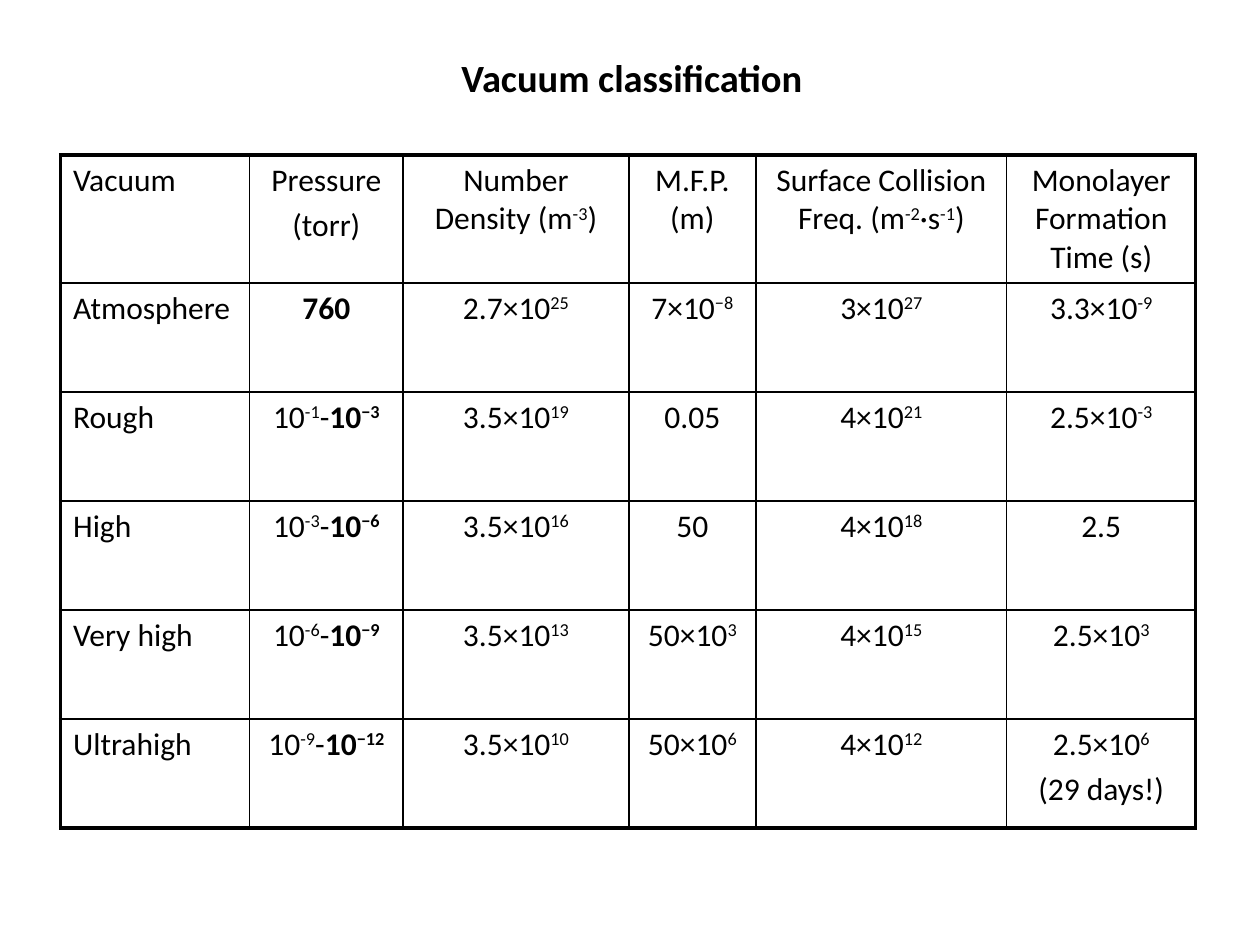
import pptx
import pptx.util
import pptx.dml.color
import pptx.enum.text
import pptx.oxml
import pptx.oxml.ns

Pt = pptx.util.Pt
ALIGN = pptx.enum.text.PP_ALIGN
ANCHOR = pptx.enum.text.MSO_ANCHOR
COLORS = {"text": "000000", "border": "000000"}
FONT = "Calibri"
COL_WIDTHS = [108, 87.8, 128.9, 72.7, 143.3, 108]
HEADER_HEIGHT, ROW_HEIGHT = 72, 62.3
OUTER, INNER = 2.25, 1

# Cell markup: *bold*, |superscript|, line feed for a new paragraph
VACUUM_LEVELS = [
    ["Vacuum", "Pressure\n(torr)", "Number Density (m|-3|)", "M.F.P. (m)",
     "Surface Collision Freq. (m|-2|·s|-1|)", "Monolayer Formation Time (s)"],
    ["Atmosphere", "*760*", "2.7×10|25|", "7×10|−8|", "3×10|27|", "3.3×10|-9|"],
    ["Rough", "10|-1|-*10|−3|*", "3.5×10|19|", "0.05", "4×10|21|", "2.5×10|-3|"],
    ["High", "10|-3|-*10|−6|*", "3.5×10|16|", "50", "4×10|18|", "2.5"],
    ["Very high", "10|-6|-*10|−9|*", "3.5×10|13|", "50×10|3|", "4×10|15|", "2.5×10|3|"],
    ["Ultrahigh", "10|-9|-*10|−12|*", "3.5×10|10|", "50×10|6|", "4×10|12|",
     "2.5×10|6|\n(29 days!)"],
]


def format_run(r, size, bold=False):
    r.font.name = FONT
    r.font.size = Pt(size)
    r.font.bold = bold
    r.font.color.rgb = pptx.dml.color.RGBColor.from_string(COLORS["text"])


def add_runs(p, markup, size):
    """Odd pieces between stars are bold, odd pieces between bars are raised."""
    for i, part in enumerate(markup.split("*")):
        for j, text in enumerate(part.split("|")):
            if text:
                r = p.add_run()
                r.text = text
                format_run(r, size, bold=i % 2 == 1)
                if j % 2:
                    r.font._element.set("baseline", "30000")


def set_borders(cell, widths):
    tc_pr = cell._tc.get_or_add_tcPr()
    for i, (side, width) in enumerate(zip("LRTB", widths)):
        ln = pptx.oxml.parse_xml(
            f'<a:ln{side} {pptx.oxml.ns.nsdecls("a")} w="{Pt(width)}"><a:solidFill>'
            f'<a:srgbClr val="{COLORS["border"]}"/></a:solidFill></a:ln{side}>')
        tc_pr.insert(i, ln)


def fill_cell(cell, markup, align):
    cell.fill.background()
    cell.vertical_anchor = ANCHOR.TOP
    tf = cell.text_frame
    for i, line in enumerate(markup.split("\n")):
        p = tf.add_paragraph() if i else tf.paragraphs[0]
        p.alignment = align
        p.space_before = Pt(3.6)
        add_runs(p, line, 18)


def add_title(s, text):
    sp = s.shapes.title
    sp.left, sp.top, sp.width, sp.height = Pt(14.4), Pt(27.4), Pt(693.4), Pt(33.8)
    tf = sp.text_frame
    tf.text = text
    tf.auto_size = pptx.enum.text.MSO_AUTO_SIZE.NONE
    tf.vertical_anchor = ANCHOR.TOP
    tf.paragraphs[0].alignment = ALIGN.CENTER
    format_run(tf.paragraphs[0].runs[0], 22, bold=True)


def add_grid(s, rows, left, top):
    n_rows, n_cols = len(rows), len(COL_WIDTHS)
    heights = [HEADER_HEIGHT] + [ROW_HEIGHT] * (n_rows - 1)
    table = s.shapes.add_table(n_rows, n_cols, Pt(left), Pt(top),
                               Pt(sum(COL_WIDTHS)), Pt(sum(heights))).table
    table.first_row = table.horz_banding = False
    for col, width in zip(table.columns, COL_WIDTHS):
        col.width = Pt(width)
    for i, row in enumerate(rows):
        table.rows[i].height = Pt(heights[i])
        for j, markup in enumerate(row):
            cell = table.cell(i, j)
            fill_cell(cell, markup, ALIGN.CENTER if j else ALIGN.LEFT)
            on_edge = [j == 0, j == n_cols - 1, i == 0, i == n_rows - 1]
            set_borders(cell, [OUTER if edge else INNER for edge in on_edge])


def main():
    prs = pptx.Presentation()
    prs.slide_width, prs.slide_height = Pt(720), Pt(540)
    s = prs.slides.add_slide(prs.slide_layouts[5])
    add_title(s, "Vacuum classification")
    add_grid(s, VACUUM_LEVELS, 34.6, 88.6)
    prs.save("out.pptx")


main()
